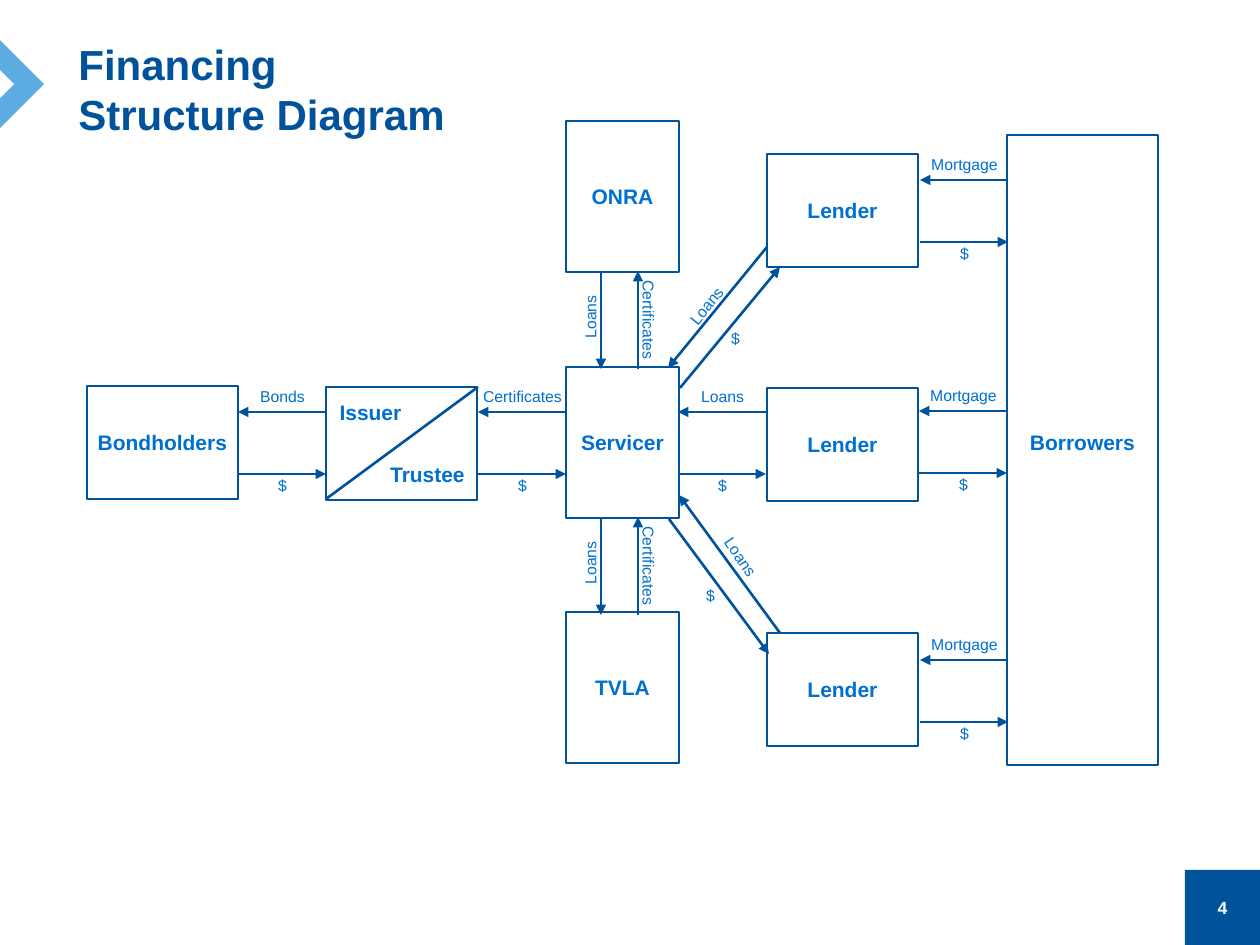
from pptx import Presentation
from pptx.dml.color import RGBColor
from pptx.enum.shapes import MSO_CONNECTOR as Conn, MSO_SHAPE as Kind
from pptx.enum.text import MSO_ANCHOR as Anchor, PP_ALIGN as Align
from pptx.oxml.ns import qn
from pptx.util import Emu, Pt
from lxml.etree import SubElement

NAVY = RGBColor(0x00, 0x53, 0x9B)
BLUE = RGBColor(0x00, 0x70, 0xD0)
SKY = RGBColor(0x5C, 0xAC, 0xE2)
WHITE = RGBColor(0xFF, 0xFF, 0xFF)
FONT = "Arial"
SCALE = 914400 / 126
LONG, SHORT = 151, 113
GAP, STEP = 88, 62


def px(n):
    return Emu(round(n * SCALE))


def write(frame, text, size, color, bold, align=Align.CENTER):
    frame.word_wrap = True
    para = frame.paragraphs[0]
    para.alignment = align
    run = para.add_run()
    run.text = text
    font = run.font
    font.name, font.size, font.bold = FONT, Pt(size), bold
    font.color.rgb = color


def label(slide, text, x, y, w=SHORT, h=32, size=9, bold=False, turn=0):
    box = slide.shapes.add_textbox(px(x), px(y), px(w), px(h))
    box.rotation = turn
    write(box.text_frame, text, size, BLUE, bold)


def shape(slide, kind, x, y, w, h, fill=None):
    item = slide.shapes.add_shape(kind, px(x), px(y), px(w), px(h))
    item.shadow.inherit = False
    if fill is None:
        item.fill.background()
        item.line.color.rgb = NAVY
        item.line.width = Pt(1.5)
    else:
        item.fill.solid()
        item.fill.fore_color.rgb = fill
        item.line.fill.background()
    return item


def party(slide, name, x, y, w=LONG, h=SHORT, foot=6):
    box = shape(slide, Kind.RECTANGLE, x, y, w, h)
    if name:
        frame = box.text_frame
        frame.margin_left = frame.margin_right = 0
        frame.margin_top, frame.margin_bottom = px(6), px(foot)
        frame.vertical_anchor = Anchor.MIDDLE
        write(frame, name, 12, BLUE, True)


def line(slide, x1, y1, x2, y2, arrow=True):
    link = slide.shapes.add_connector(Conn.STRAIGHT, px(x1), px(y1), px(x2), px(y2))
    link.line.color.rgb = NAVY
    link.line.width = Pt(1.5)
    if arrow:
        SubElement(link.line._get_or_add_ln(), qn("a:tailEnd"), type="triangle")
    SubElement(link._element.spPr, qn("a:effectLst"))


def swap(slide, text, x, y):
    line(slide, x + GAP, y, x, y)
    line(slide, x, y + STEP, x + GAP, y + STEP)
    label(slide, text, x - 12, y - 31)
    label(slide, "$", x - 12, y + 58)


def pool(slide, y):
    line(slide, 601, y, 601, y + 96)
    line(slide, 638, y + 96, 638, y - 2)
    label(slide, "Loans", 534, y + 28, turn=270)
    label(slide, "Certificates", 592, y + 31, turn=90)


def frame(slide):
    page = shape(slide, Kind.RECTANGLE, 1185, 870, 75, 75, NAVY)
    page.text_frame.vertical_anchor = Anchor.MIDDLE
    write(page.text_frame, "4", 10, WHITE, True)
    mark = shape(slide, Kind.HALF_FRAME, -33, 53, 64, 63, SKY)
    mark.rotation = 135
    title = slide.shapes.add_textbox(px(66), px(13), px(412), px(151))
    title.text_frame.vertical_anchor = Anchor.MIDDLE
    write(title.text_frame, "Financing Structure Diagram", 24, NAVY, True, Align.LEFT)


def main():
    deck = Presentation()
    deck.slide_width, deck.slide_height = px(1260), px(945)
    slide = deck.slides.add_slide(deck.slide_layouts[6])
    frame(slide)

    for name, y in (("ONRA", 121), ("Servicer", 367), ("TVLA", 612)):
        party(slide, name, 566, y, SHORT, LONG)
    party(slide, "Bondholders", 87, 386)
    party(slide, "", 326, 387)
    for y in (154, 388, 633):
        party(slide, "Lender", 767, y)
    party(slide, "Borrowers", 1007, 135, LONG, 630, foot=22)

    line(slide, 326, 499, 478, 387, arrow=False)
    label(slide, "Issuer", 314, 393, h=38, size=12, bold=True)
    label(slide, "Trustee", 371, 455, h=38, size=12, bold=True)

    for text, x, y in (
        ("Bonds", 238, 412),
        ("Certificates", 478, 412),
        ("Loans", 678, 412),
        ("Mortgage", 919, 411),
        ("Mortgage", 920, 180),
        ("Mortgage", 920, 660),
    ):
        swap(slide, text, x, y)

    for y in (273, 519):
        pool(slide, y)

    for ends in (
        (767, 247, 668, 368),
        (680, 388, 780, 267),
        (669, 519, 769, 654),
        (780, 633, 679, 495),
    ):
        line(slide, *ends)
    label(slide, "Loans", 650, 290, turn=308.6)
    label(slide, "$", 679, 323)
    label(slide, "Loans", 684, 541, turn=55.6)
    label(slide, "$", 654, 580)

    deck.save("out.pptx")


if __name__ == "__main__":
    main()
